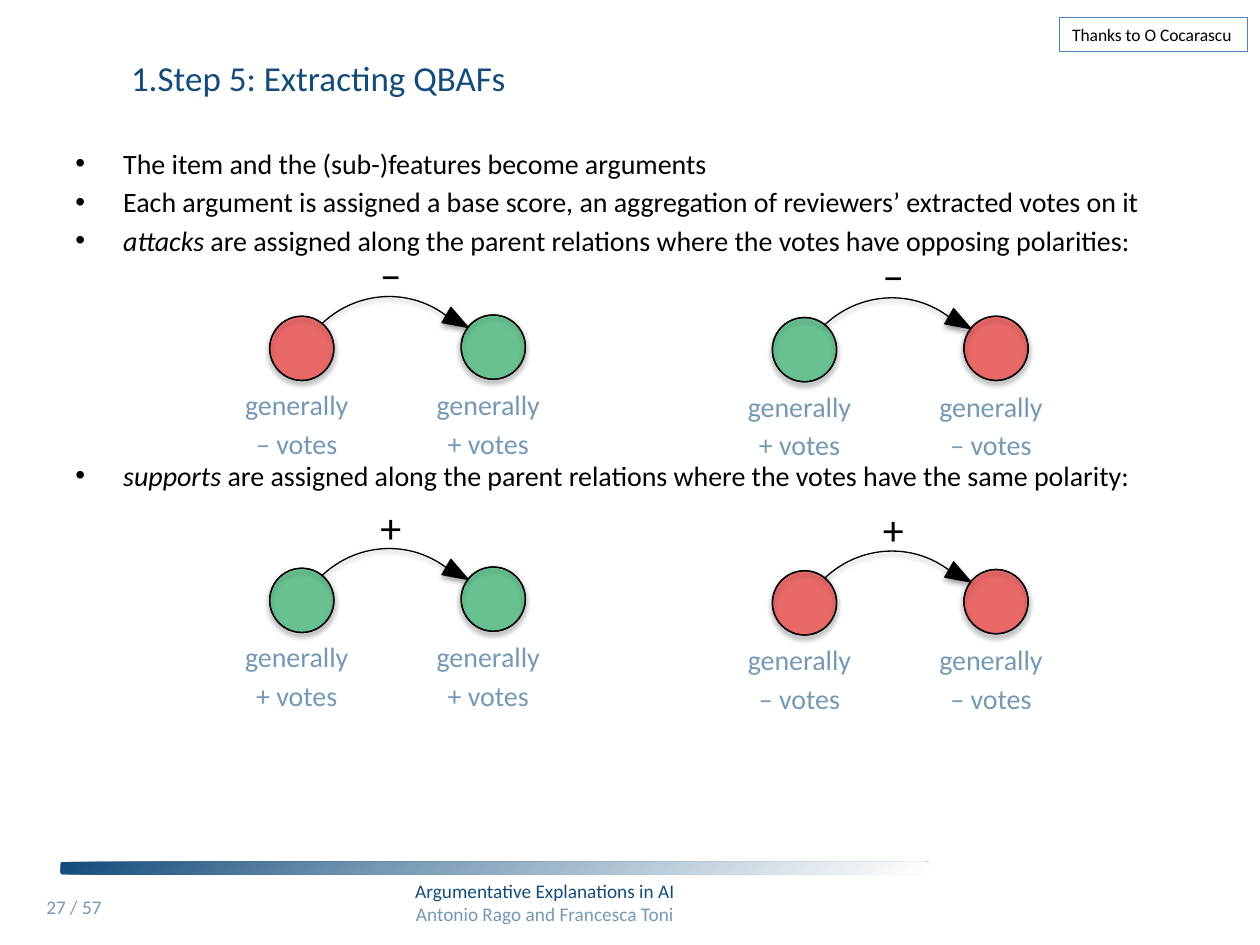
from dataclasses import dataclass
from typing import NamedTuple, Optional

from pptx import Presentation
from pptx import util as u
from pptx.dml.color import RGBColor
from pptx.enum import shapes, text
from pptx.oxml import ns, parse_xml

In = u.Inches
Kind = shapes.MSO_SHAPE
Align = text.PP_ALIGN


@dataclass(frozen=True)
class Theme:
    font: str = "Calibri"
    navy: str = "144B7A"
    steel: str = "7598B3"
    ink: str = "000000"
    paper: str = "FFFFFF"
    edge: str = "4F81BD"
    green: str = "00B050"
    red: str = "FF0000"
    title: int = 20
    body: int = 16
    sign: int = 24
    foot: int = 11
    tag: int = 10
    line: float = 0.75
    gap: float = 2.9


class Box(NamedTuple):
    x: float
    y: float
    w: float
    h: float


class Vote(NamedTuple):
    sign: str
    tint: str


class Link(NamedTuple):
    sign: str
    start: Vote
    end: Vote
    dx: float
    dy: float


class Point(NamedTuple):
    lead: str
    rest: str
    gap: float


T = Theme()
PRO = Vote("+", T.green)
CON = Vote("–", T.red)
LINKS = [
    Link("−", CON, PRO, 0, 0),
    Link("−", PRO, CON, 3.99, 0.01),
    Link("+", PRO, PRO, 0, 2),
    Link("+", CON, CON, 3.99, 2.02),
]
POINTS = [
    Point("", "The item and the (sub-)features become arguments", 0),
    Point("", "Each argument is assigned a base score, an aggregation of "
          "reviewers’ extracted votes on it", T.gap),
    Point("attacks", " are assigned along the parent relations where the "
          "votes have opposing polarities:", T.gap),
    Point("supports", " are assigned along the parent relations where the "
          "votes have the same polarity:", 115),
]


def rgb(tone: str) -> RGBColor:
    return RGBColor.from_string(tone)


def node(xml: str):
    return parse_xml(xml.replace(" ", f" {ns.nsdecls('a')} ", 1))


def style(para, size: float, tone: str) -> None:
    for run in para.runs:
        run.font.name = T.font
        run.font.size = u.Pt(size)
        run.font.color.rgb = rgb(tone)


def bullet(para, left: float, hang: float, *marks: str) -> None:
    props = para._p.get_or_add_pPr()
    props.set("marL", str(In(left)))
    props.set("indent", str(In(hang)))
    for mark in marks:
        props.append(node(mark))


def write(slide, box: Box, lines: list[str], size: float, tones: list[str],
          align=Align.LEFT, gap: float = 0, wrap: bool = True):
    shape = slide.shapes.add_textbox(*map(In, box))
    frame = shape.text_frame
    frame.word_wrap = wrap
    frame.text = "\n".join(lines)
    for i, (para, tone) in enumerate(zip(frame.paragraphs, tones)):
        para.alignment = align
        if i and gap:
            para.space_before = u.Pt(gap)
        style(para, size, tone)
    return shape


def draw(slide, kind, box: Box, tint: Optional[str], turn: float = 0,
         alpha: int = 100):
    shape = slide.shapes.add_shape(kind, *map(In, box))
    shape.rotation = turn
    shape.line.color.rgb = rgb(T.ink)
    shape.line.width = u.Pt(T.line)
    if tint:
        shape.fill.solid()
        shape.fill.fore_color.rgb = rgb(tint)
        if alpha < 100:
            tone = shape._element.spPr.find(".//" + ns.qn("a:srgbClr"))
            tone.append(node(f'<a:alpha val="{alpha * 1000}"/>'))
    else:
        shape.fill.background()
    shape.shadow.inherit = False
    shape._element.spPr.find(ns.qn("a:effectLst")).append(node(
        '<a:outerShdw blurRad="40000" dist="23000" dir="5400000" '
        f'rotWithShape="0"><a:srgbClr val="{T.ink}"><a:alpha val="35000"/>'
        "</a:srgbClr></a:outerShdw>"))
    return shape


def relate(slide, link: Link) -> None:
    def at(x: float, y: float, w: float, h: float) -> Box:
        return Box(x + link.dx, y + link.dy, w, h)

    arc = draw(slide, Kind.BLOCK_ARC, at(2.31, 2.36, 1.53, 1.5), T.ink, 318.2)
    for i, value in enumerate((160.86, 213.77, 0)):
        arc.adjustments[i] = value
    write(slide, at(2.92, 1.93, 0.37, 0.5), [link.sign], T.sign, [T.ink])
    draw(slide, Kind.ISOSCELES_TRIANGLE, at(3.56, 2.45, 0.14, 0.2), T.ink, 120)
    ends = ((link.start, 1.7, 2.14, 2.51), (link.end, 3.22, 3.66, 2.5))
    for vote, left, x, y in ends:
        write(slide, at(left, 3.03, 1.31, 1.01),
              ["generally", f"{vote.sign} votes"], T.body, [T.steel] * 2,
              Align.CENTER, T.gap)
        for tint in (vote.tint, None):
            draw(slide, Kind.OVAL, at(x, y, 0.51, 0.51), tint, alpha=50)


def footer(slide) -> None:
    bar = draw(slide, Kind.ROUNDED_RECTANGLE, Box(0.48, 6.84, 6.89, 0.1), None)
    bar.line.fill.background()
    bar.shadow.inherit = False
    stops = "".join(
        f'<a:gs pos="{pos * 1000}"><a:srgbClr val="{tone}"/></a:gs>'
        for pos, tone in ((0, T.paper), (63, T.steel), (100, T.navy)))
    props = bar._element.spPr
    props.replace(props.find(ns.qn("a:noFill")), node(
        f'<a:gradFill rotWithShape="0"><a:gsLst>{stops}</a:gsLst>'
        '<a:path path="circle"><a:fillToRect l="100000" t="100000"/>'
        "</a:path></a:gradFill>"))
    effects = props.find(ns.qn("a:effectLst"))
    for child in list(effects):
        effects.remove(child)
    write(slide, Box(1.16, 6.93, 6.33, 0.47),
          ["Argumentative Explanations in AI",
           "Antonio Rago and Francesca Toni"],
          T.foot, [T.navy, T.steel], Align.CENTER)
    page = write(slide, Box(0.27, 7.06, 0.67, 0.4), ["27 / 57"], T.foot,
                 [T.steel])
    page.fill.solid()
    page.fill.fore_color.rgb = rgb(T.paper)


def head(slide) -> None:
    title = slide.shapes.title
    title.left, title.top, title.width, title.height = map(
        In, (0.5, 0.3, 9, 0.63))
    frame = title.text_frame
    frame.text = "Step 5: Extracting QBAFs"
    frame.vertical_anchor = text.MSO_ANCHOR.MIDDLE
    para = frame.paragraphs[0]
    para.alignment = Align.JUSTIFY
    bullet(para, 0.44, 0, '<a:buFont typeface="+mj-lt"/>',
           '<a:buAutoNum type="arabicPeriod"/>')
    style(para, T.title, T.navy)


def body(slide) -> None:
    shape = write(slide, Box(0.5, 1.11, 9, 5.59),
                  [p.lead + p.rest for p in POINTS], T.body,
                  [T.ink] * len(POINTS))
    for para, point in zip(shape.text_frame.paragraphs, POINTS):
        if point.gap:
            para.space_before = u.Pt(point.gap)
        bullet(para, 0.38, -0.38, '<a:buFont typeface="Arial"/>',
               '<a:buChar char="•"/>')
        if point.lead:
            para.runs[0].text = point.lead
            para.runs[0].font.italic = True
            para.add_run().text = point.rest
            style(para, T.body, T.ink)


def main() -> None:
    deck = Presentation()
    deck.slide_width, deck.slide_height = In(10), In(7.5)
    slide = deck.slides.add_slide(deck.slide_layouts[5])
    footer(slide)
    head(slide)
    body(slide)
    for link in LINKS:
        relate(slide, link)
    tag = write(slide, Box(8.41, 0.14, 1.49, 0.27), ["Thanks to O Cocarascu"],
                T.tag, [T.ink], wrap=False)
    tag.line.color.rgb = rgb(T.edge)
    tag.line.width = u.Pt(T.line)
    deck.save("out.pptx")


if __name__ == "__main__":
    main()
